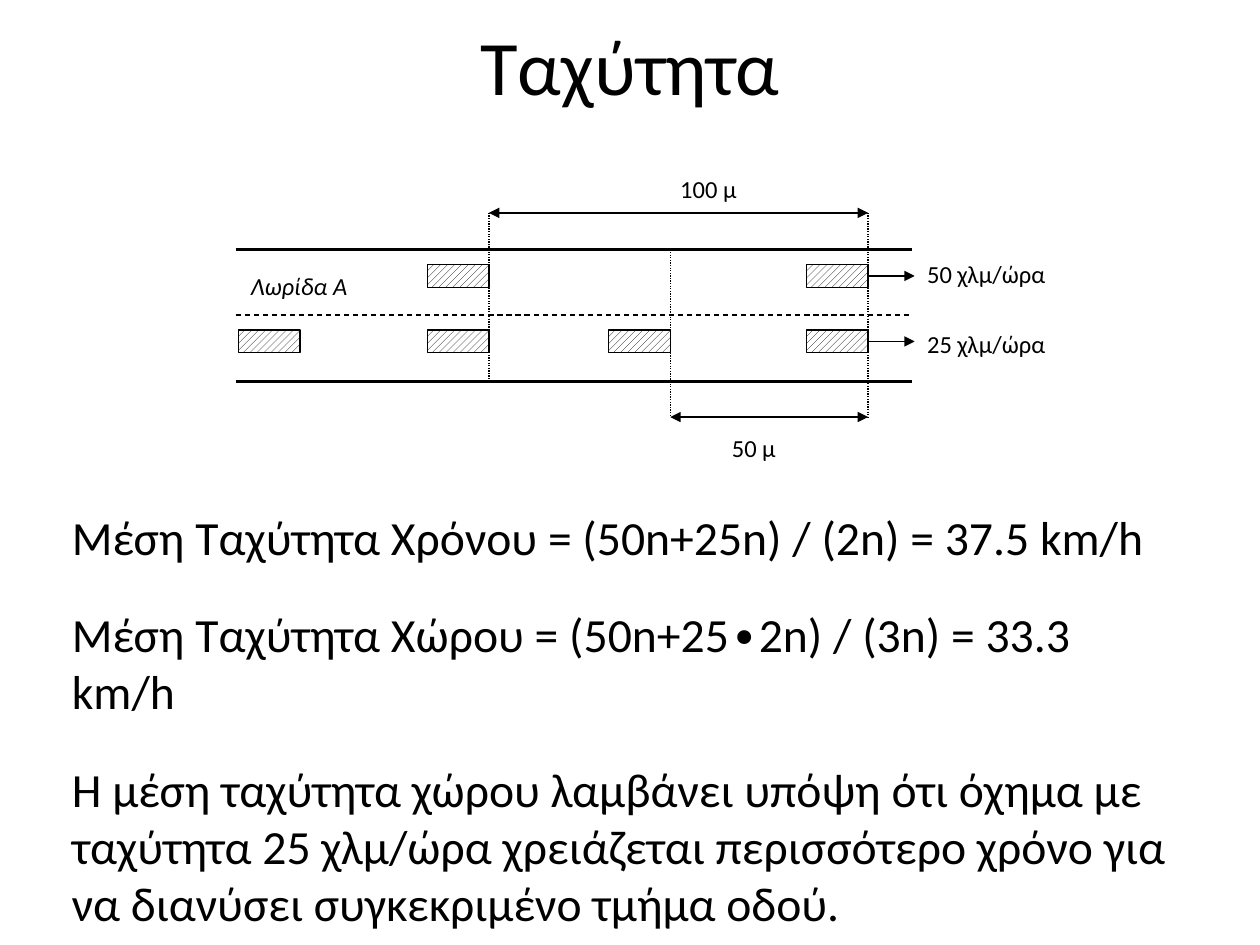
from dataclasses import dataclass

from lxml.etree import SubElement
from pptx import Presentation
from pptx.dml.color import RGBColor
from pptx.enum.dml import MSO_LINE, MSO_PATTERN
from pptx.enum.shapes import MSO_CONNECTOR, MSO_SHAPE
from pptx.enum.text import MSO_ANCHOR, MSO_AUTO_SIZE, PP_ALIGN
from pptx.oxml.ns import qn
from pptx.util import Inches, Pt


@dataclass(frozen=True)
class Theme:
    font: str = "Calibri"
    ink: RGBColor = RGBColor(0, 0, 0)
    paper: RGBColor = RGBColor(255, 255, 255)
    title: float = 44
    body: float = 27.2
    label: float = 14
    thin: float = 0.75
    thick: float = 1.5


THEME = Theme()
BODY = (
    "Μέση Ταχύτητα Χρόνου = (50n+25n) / (2n) = 37.5 km/h",
    "Μέση Ταχύτητα Χώρου = (50n+25∙2n) / (3n) = 33.3 km/h",
    "Η μέση ταχύτητα χώρου λαμβάνει υπόψη ότι όχημα με ταχύτητα 25 χλμ/ώρα "
    "χρειάζεται περισσότερο χρόνο για να διανύσει συγκεκριμένο τμήμα οδού.",
)


def place(shape, box):
    shape.left, shape.top, shape.width, shape.height = map(Inches, box)


def write(para, text, size, italic=False):
    run = para.add_run()
    run.text = text
    font = run.font
    font.name, font.size, font.italic = THEME.font, Pt(size), italic
    font.color.rgb = THEME.ink


def add_title(slide, box):
    title = slide.shapes.title
    place(title, box)
    frame = title.text_frame
    frame.auto_size = MSO_AUTO_SIZE.NONE
    frame.vertical_anchor = MSO_ANCHOR.MIDDLE
    para = frame.paragraphs[0]
    para.alignment = PP_ALIGN.CENTER
    write(para, "Ταχύτητα", THEME.title)


def add_body(slide, box):
    body = slide.placeholders[1]
    place(body, box)
    frame = body.text_frame
    frame.auto_size = MSO_AUTO_SIZE.NONE
    for i, text in enumerate(BODY):
        para = frame.add_paragraph() if i else frame.paragraphs[0]
        props = para._p.get_or_add_pPr()
        props.set("marL", "0")
        props.set("indent", "0")
        para.space_before = Pt(23 if i else 0)
        SubElement(props, qn("a:buNone"))
        write(para, text, THEME.body)


def add_line(shapes, start, end, width=THEME.thin, dash=None, arrows=()):
    line = shapes.add_connector(MSO_CONNECTOR.STRAIGHT, *map(Inches, start + end))
    line.line.color.rgb = THEME.ink
    line.line.width = Pt(width)
    if dash:
        line.line.dash_style = dash
    for name in arrows:
        SubElement(line.line._get_or_add_ln(), qn(f"a:{name}"), type="triangle")
    SubElement(line._element.spPr, qn("a:effectLst"))


def add_car(shapes, x, y):
    car = shapes.add_shape(MSO_SHAPE.RECTANGLE, *map(Inches, (x, y, 0.49, 0.18)))
    car.shadow.inherit = False
    car.fill.patterned()
    car.fill.pattern = MSO_PATTERN.WIDE_UPWARD_DIAGONAL
    car.fill.fore_color.rgb = THEME.ink
    car.fill.back_color.rgb = THEME.paper
    car.line.color.rgb = THEME.ink
    car.line.width = Pt(THEME.thin)


def add_label(shapes, text, x, y, width, italic=False):
    label = shapes.add_textbox(*map(Inches, (x, y, width, 0.29)))
    if not italic:
        label.fill.solid()
        label.fill.fore_color.rgb = THEME.paper
    frame = label.text_frame
    frame.word_wrap = True
    para = frame.paragraphs[0]
    para.space_after = Pt(10)
    write(para, text, THEME.label, italic)


def add_road(slide, left, top):
    """Two lanes of cars with their speeds and spacings."""
    shapes = slide.shapes.add_group_shape().shapes
    both, ahead = ("headEnd", "tailEnd"), ("tailEnd",)
    road = 5.37
    edges = [top + y for y in (0.65, 1.17, 1.7)]
    fast, slow = top + 0.77, top + 1.29
    rear, mid, front = [left + x for x in (2.01, 3.45, 5.02)]
    upper, lower = top + 0.36, top + 1.98

    for i, y in enumerate(edges):
        middle = i == 1
        add_line(shapes, (left, y), (left + road, y),
                 THEME.thin if middle else THEME.thick,
                 MSO_LINE.DASH if middle else None)

    lanes = ((fast, (rear, front)), (slow, (left + 0.51, rear, mid, front)))
    for y, noses in lanes:
        for nose in noses:
            add_car(shapes, nose - 0.49, y)

    for x, start, end in ((rear, upper, edges[2]), (front, upper, lower),
                          (mid, edges[0], lower)):
        add_line(shapes, (x, start), (x, end), dash=MSO_LINE.ROUND_DOT)

    add_line(shapes, (rear, upper), (front, upper), arrows=both)
    add_line(shapes, (mid, lower), (front, lower), arrows=both)
    add_label(shapes, "100 μ", left + 3.43, top, 0.69)
    add_label(shapes, "50 μ", left + 3.84, top + 2.06, 0.69)

    for y, drop, text in ((fast, 0.09, "50 χλμ/ώρα"), (slow, 0.06, "25 χλμ/ώρα")):
        add_line(shapes, (front, y + 0.09), (left + 5.39, y + 0.09), arrows=ahead)
        add_label(shapes, text, left + 5.39, y - drop, 1.17)
    add_label(shapes, "Λωρίδα Α", left + 0.02, fast, 0.98, italic=True)


def main():
    deck = Presentation()
    deck.slide_width, deck.slide_height = Inches(10), Inches(7.5)
    slide = deck.slides.add_slide(deck.slide_layouts[1])
    add_title(slide, (0, 0, 10, 1.02))
    add_body(slide, (0.47, 3.98, 9, 2.89))
    add_road(slide, 1.87, 1.33)
    deck.save("out.pptx")


if __name__ == "__main__":
    main()
